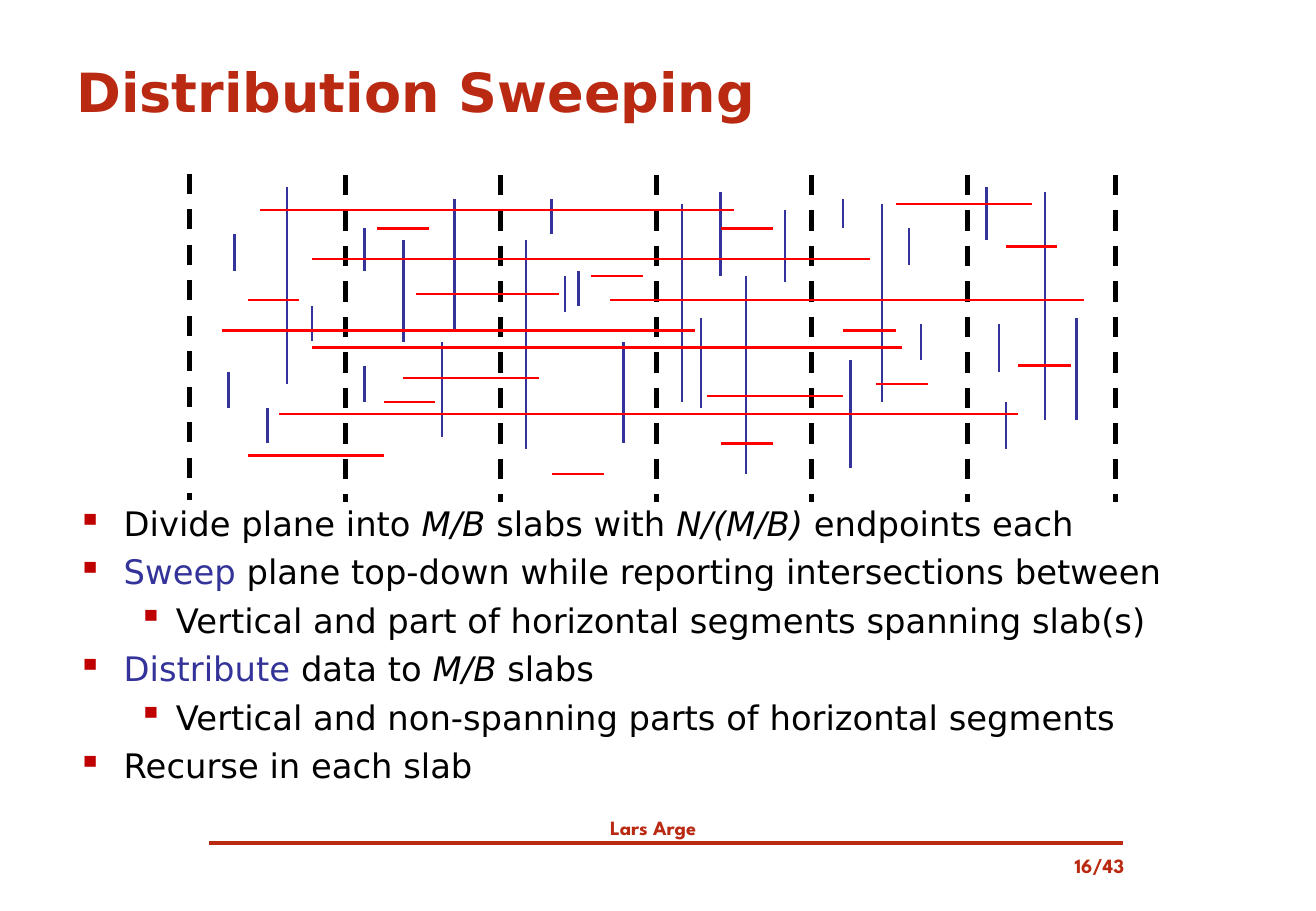
"""Build the Distribution Sweeping slide: a slab diagram above six bullets."""
import itertools

import lxml.etree
import pptx
import pptx.dml.color
import pptx.enum.dml
import pptx.enum.shapes
import pptx.enum.text
import pptx.oxml.ns
import pptx.util

Inches, Pt = pptx.util.Inches, pptx.util.Pt
rgb = pptx.dml.color.RGBColor.from_string
qn = pptx.oxml.ns.qn
ALIGN = pptx.enum.text.PP_ALIGN
ANCHOR = pptx.enum.text.MSO_ANCHOR
BRICK, RED, NAVY, BLACK = "BA2A12", "FF0000", "333399", "000000"

presentation = pptx.Presentation()
presentation.slide_width = Inches(10.83)
presentation.slide_height = Inches(7.5)
slide = presentation.slides.add_slide(presentation.slide_layouts[6])


def add_line(x1, y1, x2, y2, color, width):
    connector = slide.shapes.add_connector(
        pptx.enum.shapes.MSO_CONNECTOR.STRAIGHT,
        Inches(x1), Inches(y1), Inches(x2), Inches(y2))
    connector.line.color.rgb = rgb(color)
    connector.line.width = Pt(width)
    properties = connector._element.spPr
    lxml.etree.SubElement(properties, qn("a:effectLst"))
    return connector


def add_text_box(left, top, width, height):
    text_frame = slide.shapes.add_textbox(
        Inches(left), Inches(top), Inches(width), Inches(height)).text_frame
    text_frame.word_wrap = True
    return text_frame


labels = [
    ("Lars Arge", (0.53, 6.66, 9.69, 0.3), "League Spartan", 12, ALIGN.CENTER, ANCHOR.TOP),
    ("16/43", (8.37, 6.98, 0.98, 0.3), "League Spartan", 12, ALIGN.RIGHT, ANCHOR.TOP),
    ("Distribution Sweeping", (0.53, 0.36, 9.75, 0.77), "DejaVu Sans", 32, ALIGN.LEFT,
     ANCHOR.MIDDLE),
]
for text, box, font_name, size, alignment, anchor in labels:
    text_frame = add_text_box(*box)
    text_frame.vertical_anchor = anchor
    paragraph = text_frame.paragraphs[0]
    paragraph.text = text
    paragraph.alignment = alignment
    paragraph.font.name = font_name
    paragraph.font.size = Pt(size)
    paragraph.font.bold = True
    paragraph.font.color.rgb = rgb(BRICK)
add_line(1.72, 6.94, 9.24, 6.94, BRICK, 2.25)

PLAIN, ITALIC, KEYWORD = (BLACK, False), (BLACK, True), (NAVY, False)
bullets = [
    (0, [("Divide plane into ", PLAIN), ("M/B ", ITALIC), ("slabs with ", PLAIN),
         ("N/(M/B) ", ITALIC), ("endpoints each", PLAIN)]),
    (0, [("Sweep ", KEYWORD),
         ("plane top-down while reporting intersections between", PLAIN)]),
    (1, [("Vertical and part of horizontal segments spanning slab(s)", PLAIN)]),
    (0, [("Distribute ", KEYWORD), ("data to ", PLAIN), ("M/B ", ITALIC), ("slabs", PLAIN)]),
    (1, [("Vertical and non-spanning parts of horizontal segments", PLAIN)]),
    (0, [("Recurse in each slab", PLAIN)]),
]
indents = [(0.38, -0.38), (0.81, -0.31)]
text_frame = add_text_box(0.54, 4.09, 9.8, 2.5)
for index, (level, runs) in enumerate(bullets):
    paragraph = text_frame.add_paragraph() if index else text_frame.paragraphs[0]
    paragraph.level = level
    properties = paragraph._p.get_or_add_pPr()
    margin, first_line = indents[level]
    properties.set("marL", str(Inches(margin)))
    properties.set("indent", str(Inches(first_line)))
    bullet_color = lxml.etree.SubElement(properties, qn("a:buClr"))
    lxml.etree.SubElement(bullet_color, qn("a:srgbClr"), val="C00000")
    lxml.etree.SubElement(properties, qn("a:buChar"), char="▪")
    if index:
        paragraph.space_before = Pt(4.7)
    paragraph.font.name = "DejaVu Sans"
    paragraph.font.size = Pt(20)
    for text, (color, italic) in runs:
        run = paragraph.add_run()
        run.text = text
        run.font.color.rgb = rgb(color)
        run.font.italic = italic

slab_edges = [1.56] + [2.84 + 1.28 * slab for slab in range(5)] + [9.18]
for x in slab_edges:
    top = 1.43 if x == slab_edges[0] else 1.44
    boundary = add_line(x, top, x, top + 2.69, BLACK, 3)
    boundary.line.dash_style = pptx.enum.dml.MSO_LINE.DASH

vertical_segments = [
    (2.36, 1.54, 3.16), (1.93, 1.93, 2.23), (1.88, 3.06, 3.36), (2.36, 2.32, 2.62),
    (2.57, 2.52, 2.81), (2.2, 3.36, 3.65), (3, 3.01, 3.31), (4.65, 2.27, 2.57),
    (4.54, 1.64, 1.93), (4.76, 2.23, 2.52), (3.74, 1.64, 2.72), (7.26, 1.68, 3.31),
    (6.14, 2.27, 3.9), (5.61, 1.68, 3.31), (3.32, 1.98, 2.82), (5.13, 2.82, 3.65),
    (3.64, 2.82, 3.6), (3, 1.88, 2.23), (4.33, 1.98, 3.7), (5.93, 1.58, 2.27),
    (6.46, 1.73, 2.32), (5.77, 2.62, 3.36), (7.48, 1.88, 2.18), (7.58, 2.67, 2.96),
    (7, 2.96, 3.85), (6.94, 1.64, 1.88), (8.6, 1.58, 3.46), (8.22, 2.67, 3.06),
    (8.86, 2.62, 3.46), (8.12, 1.54, 1.98), (8.28, 3.31, 3.7),
]
for x, top, bottom in vertical_segments:
    add_line(x, top, x, bottom, NAVY, 1.38)

horizontal_segments = [
    (1.88, 5.93, 6.36), (2.47, 2.04, 2.46), (1.88, 3.1, 3.53), (2.03, 8.28, 8.7),
    (3.16, 7.21, 7.64), (2.72, 6.94, 7.37), (3.31, 3.16, 3.58), (3.65, 5.93, 6.36),
    (2.27, 4.86, 5.29), (3.9, 4.54, 4.97), (3.01, 8.38, 8.81),
    (1.73, 2.14, 2.84, 5.4, 6.04), (2.13, 2.57, 2.84, 6.68, 7.16),
    (1.68, 7.37, 7.96, 8.49), (2.42, 3.42, 4.12, 4.6), (2.47, 5.02, 5.4, 7.96, 8.92),
    (2.72, 1.83, 2.84, 5.4, 5.72), (2.86, 2.57, 2.84, 6.68, 7.42),
    (3.11, 3.32, 4.12, 4.44), (3.26, 5.82, 6.68, 6.94),
    (3.41, 2.3, 2.84, 7.96, 8.38), (3.75, 2.04, 2.84, 3.16),
]
for y, *cuts in horizontal_segments:
    for left, right in itertools.pairwise(cuts):
        add_line(left, y, right, y, RED, 1.38)

presentation.save("out.pptx")
